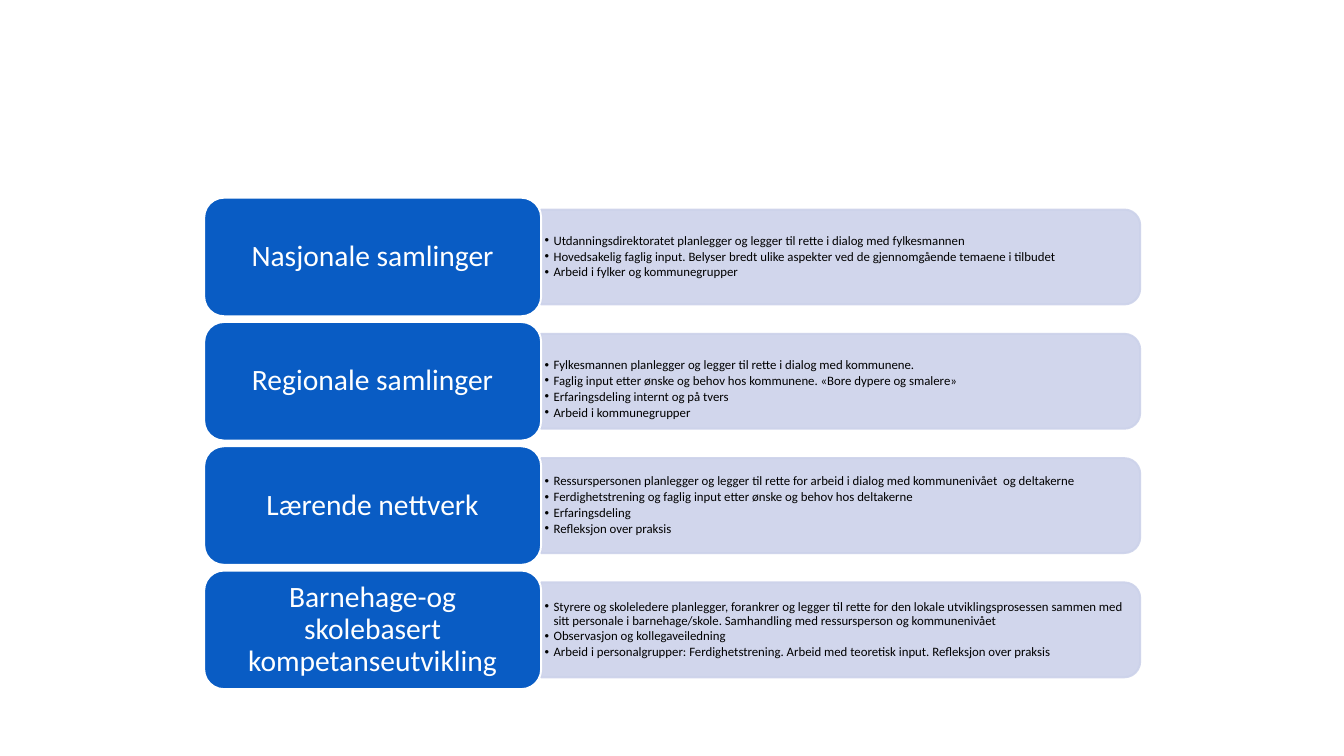
from dataclasses import dataclass

from lxml import etree
from pptx import Presentation, util as u
from pptx.dml.color import RGBColor
from pptx.enum import shapes, text
from pptx.oxml import ns


@dataclass(frozen=True)
class Theme:
    """Hold the colours, font and type sizes."""
    blue: str = "095CC4"
    pale: str = "CCD2EA"
    white: str = "FFFFFF"
    black: str = "000000"
    font: str = "Calibri"
    head: float = 30
    body: float = 13


THEME = Theme()
LEFT, TOP, WIDTH, HEIGHT = 207.4, 200.9, 950.7, 120.5
PITCH = 126.3
SPLIT = 0.36

ROWS = [
    ("Nasjonale samlinger", 0, [
        "Utdanningsdirektoratet planlegger og legger til rette i dialog med fylkesmannen",
        "Hovedsakelig faglig input. Belyser bredt ulike aspekter ved de gjennomgående temaene i tilbudet",
        "Arbeid i fylker og kommunegrupper",
    ]),
    ("Regionale samlinger", 16, [
        "Fylkesmannen planlegger og legger til rette i dialog med kommunene.",
        "Faglig input etter ønske og behov hos kommunene. «Bore dypere og smalere»",
        "Erfaringsdeling internt og på tvers",
        "Arbeid i kommunegrupper",
    ]),
    ("Lærende nettverk", 0, [
        "Ressurspersonen planlegger og legger til rette for arbeid i dialog med kommunenivået  og deltakerne",
        "Ferdighetstrening og faglig input etter ønske og behov hos deltakerne",
        "Erfaringsdeling",
        "Refleksjon over praksis",
    ]),
    ("Barnehage-og skolebasert kompetanseutvikling", 0, [
        "Styrere og skoleledere planlegger, forankrer og legger til rette for den lokale "
        "utviklingsprosessen sammen med sitt personale i barnehage/skole. "
        "Samhandling med ressursperson og kommunenivået",
        "Observasjon og kollegaveiledning",
        "Arbeid i personalgrupper: Ferdighetstrening. Arbeid med teoretisk input. Refleksjon over praksis",
    ]),
]


def write(shape, lines, size, color, align, pad, bullet=False, drop=0):
    """Fill a shape with formatted paragraphs."""
    frame = shape.text_frame
    frame.word_wrap = True
    frame.auto_size = text.MSO_AUTO_SIZE.NONE
    frame.vertical_anchor = text.MSO_ANCHOR.MIDDLE
    frame.margin_left = frame.margin_right = u.Pt(pad)
    frame.margin_top = u.Pt(pad / 2 + drop)
    frame.margin_bottom = u.Pt(pad / 2)
    for i, line in enumerate(lines):
        para = frame.add_paragraph() if i else frame.paragraphs[0]
        para.text = line
        if bullet:
            props = para._p.get_or_add_pPr()
            props.set("marL", str(u.Pt(9)))
            props.set("indent", str(u.Pt(-9)))
            etree.SubElement(props, ns.qn("a:buChar")).set("char", "•")
        para.alignment = align
        para.line_spacing = 0.9
        para.space_before = u.Pt(0)
        para.space_after = u.Pt(2 if bullet else 0)
        font = para.font
        font.name, font.size, font.bold = THEME.font, u.Pt(size), False
        font.color.rgb = RGBColor.from_string(color)


def draw(slide, kind, box, fill, line, alpha=None):
    """Add a filled and outlined preset shape."""
    shape = slide.shapes.add_shape(kind, *map(u.Pt, box))
    shape.shadow.inherit = False
    shape.fill.solid()
    shape.fill.fore_color.rgb = RGBColor.from_string(fill)
    shape.line.color.rgb = RGBColor.from_string(line)
    shape.line.width = u.Pt(2)
    if alpha:
        for color in shape._element.spPr.iter(ns.qn("a:srgbClr")):
            etree.SubElement(color, ns.qn("a:alpha")).set("val", str(alpha * 1000))
    return shape


def add_list(slide, holder, box, lines, drop):
    """Place a pale panel, round at its right end, with a list on top."""
    x, y, w, h = box
    turned = (x + (w - h) / 2, y + (h - w) / 2, h, w)
    panel = draw(slide, shapes.MSO_SHAPE.ROUND_2_SAME_RECTANGLE, turned,
                 THEME.pale, THEME.pale, alpha=90)
    panel.rotation = 90
    slide.shapes._spTree.append(holder._element)
    holder.left, holder.top = u.Pt(x), u.Pt(y + 4.7)
    holder.width, holder.height = u.Pt(w - 4.7), u.Pt(h - 9.4)
    write(holder, lines, THEME.body, THEME.black, text.PP_ALIGN.LEFT, 3.6,
          bullet=True, drop=drop)


def add_row(slide, holder, box, row):
    """Place one level: its list panel and its blue label."""
    name, drop, lines = row
    x, y, w, h = box
    side = w * SPLIT
    add_list(slide, holder, (x + side, y + h * 0.1, w - side, h * 0.8), lines, drop)
    label = draw(slide, shapes.MSO_SHAPE.ROUNDED_RECTANGLE, (x, y, side, h),
                 THEME.blue, THEME.white)
    write(label, [name], THEME.head, THEME.white, text.PP_ALIGN.CENTER, 8.6)


def main():
    """Build and save the slide."""
    deck = Presentation()
    deck.slide_width, deck.slide_height = u.Pt(1365.12), u.Pt(768.24)
    slide = deck.slides.add_slide(deck.slide_layouts.get_by_name("Comparison"))
    title, *holders = slide.placeholders
    title._element.getparent().remove(title._element)
    for i, (holder, row) in enumerate(zip(holders, ROWS)):
        add_row(slide, holder, (LEFT, TOP + i * PITCH, WIDTH, HEIGHT), row)
    deck.save("out.pptx")


if __name__ == "__main__":
    main()
